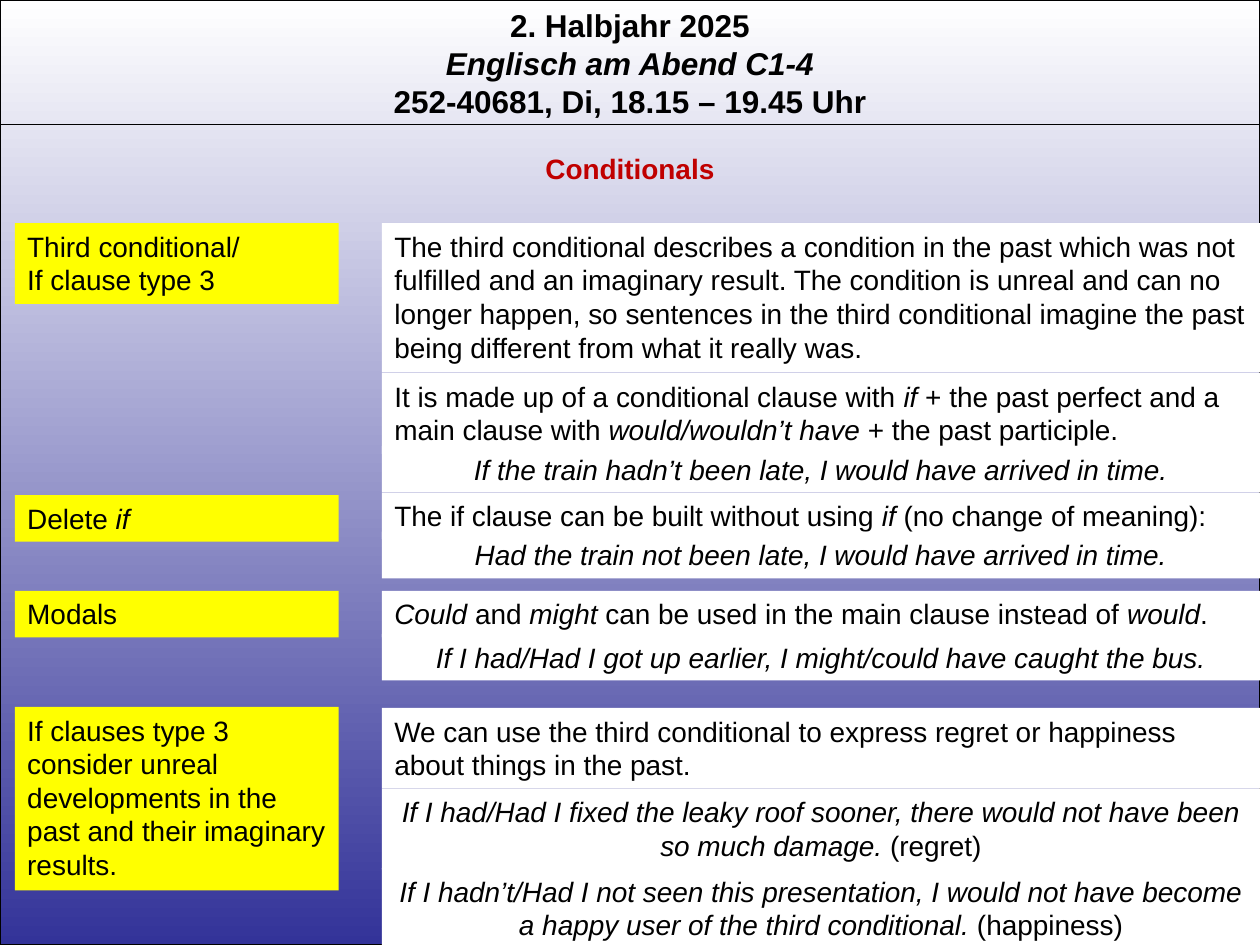
from pptx import Presentation
from pptx import util as u
from pptx.dml.color import RGBColor
from pptx.enum import shapes, text
from pptx.oxml.ns import qn
from lxml import etree

THEME = {
    "font": "Arial", "body": 16, "header": 18, "rule": 0.75,
    "ink": "000000", "accent": "C00000", "label": "FFFF00", "note": "FFFFFF",
    "top": "FFFFFF", "bottom": "333399",
}
LEFT, CENTER = text.PP_ALIGN.LEFT, text.PP_ALIGN.CENTER

# Content: asterisks enclose italics, a line break starts a paragraph
HEADER = "2. Halbjahr 2025\n*Englisch am Abend C1-4*\n252-40681, Di, 18.15 – 19.45 Uhr"
TITLE = "Conditionals"
# (top in cm, lines, text)
LABELS = [
    (4.5, 2, "Third conditional/\nIf clause type 3"),
    (9.98, 1, "Delete *if*"),
    (11.91, 1, "Modals"),
    (14.25, 5, "If clauses type 3 consider unreal developments in the past "
               "and their imaginary results."),
]
# (top in cm, lines, alignment, text)
NOTES = [
    (4.5, 4, LEFT, "The third conditional describes a condition in the past which was not "
                   "fulfilled and an imaginary result. The condition is unreal and can no "
                   "longer happen, so sentences in the third conditional imagine the past "
                   "being different from what it really was."),
    (7.52, 2, LEFT, "It is made up of a conditional clause with *if* + the past perfect and "
                    "a main clause with *would/wouldn’t have *+ the past participle."),
    (8.99, 1, CENTER, "*If the train hadn’t been late, I would have arrived in time.*"),
    (9.93, 1, LEFT, "The if clause can be built without using *if* (no change of meaning):"),
    (10.72, 1, CENTER, "*Had the train not been late, I would have arrived in time.*"),
    (11.91, 1, LEFT, "*Could* and *might* can be used in the main clause instead of *would*."),
    (12.78, 1, CENTER, "*If I had/Had I got up earlier, I might/could have caught the bus.*"),
    (14.27, 2, LEFT, "We can use the third conditional to express regret or happiness "
                     "about things in the past."),
    (15.9, 2, CENTER, "*If I had/Had I fixed the leaky roof sooner, there would not have "
                      "been so much damage. *(regret)"),
    (17.5, 2, CENTER, "*If I hadn’t/Had I not seen this presentation, I would not have "
                      "become a happy user of the third conditional. *(happiness)"),
]

# Geometry in cm
WIDTH, HEIGHT = 25.4, 19.05
LABEL_X, LABEL_W = 0.3, 6.53
NOTE_X = 7.7
LINE_H, PADDING = 0.69, 0.25


def rgb(name):
    return RGBColor.from_string(THEME[name])


def write(sp, content, align=LEFT, size="body", color="ink", bold=False):
    tf = sp.text_frame
    frame = {"word_wrap": True, "vertical_anchor": text.MSO_ANCHOR.TOP,
             "auto_size": text.MSO_AUTO_SIZE.SHAPE_TO_FIT_TEXT}
    for key, value in frame.items():
        setattr(tf, key, value)
    for i, line in enumerate(content.split("\n")):
        p = tf.add_paragraph() if i else tf.paragraphs[0]
        p.alignment = align
        for j, part in enumerate(line.split("*")):
            if not part:
                continue
            r = p.add_run()
            r.text = part
            style = {"name": THEME["font"], "size": u.Pt(THEME[size]),
                     "bold": bold, "italic": j % 2 == 1}
            for key, value in style.items():
                setattr(r.font, key, value)
            r.font.color.rgb = rgb(color)


def rectangle(s, x, y, w, h):
    sp = s.shapes.add_shape(shapes.MSO_SHAPE.RECTANGLE, u.Cm(x), u.Cm(y), u.Cm(w), u.Cm(h))
    sp.shadow.inherit = False
    return sp


def box(s, x, y, w, lines, fill, content, align=LEFT):
    sp = rectangle(s, x, y, w, PADDING + LINE_H * lines)
    sp.fill.solid()
    sp.fill.fore_color.rgb = rgb(fill)
    sp.line.fill.background()
    write(sp, content, align)


def outline(line):
    line.color.rgb = rgb("ink")
    line.width = u.Pt(THEME["rule"])


def main():
    prs = Presentation()
    prs.slide_width, prs.slide_height = u.Cm(WIDTH), u.Cm(HEIGHT)
    s = prs.slides.add_slide(prs.slide_layouts[5])

    # Gradient backdrop
    backdrop = rectangle(s, 0, 0, WIDTH, HEIGHT)
    backdrop.fill.gradient()
    backdrop.fill.gradient_angle = 270
    for stop, name in zip(backdrop.fill.gradient_stops, ("top", "bottom")):
        stop.color.rgb = rgb(name)
    outline(backdrop.line)

    # Course header with rule
    header = s.shapes.add_textbox(0, 0, u.Cm(WIDTH), u.Cm(2.57))
    write(header, HEADER, CENTER, "header", bold=True)
    rule = s.shapes.add_connector(shapes.MSO_CONNECTOR.STRAIGHT,
                                  0, u.Cm(2.51), u.Cm(WIDTH), u.Cm(2.51))
    outline(rule.line)
    etree.SubElement(rule.element.spPr, qn("a:effectLst"))

    # Title, brought in front of the backdrop
    title = s.shapes.title
    place = {"left": 0, "top": u.Cm(2.92), "width": u.Cm(WIDTH),
             "height": u.Cm(PADDING + LINE_H)}
    for key, value in place.items():
        setattr(title, key, value)
    write(title, TITLE, CENTER, color="accent", bold=True)
    title.element.getparent().append(title.element)

    # Labels on the left, explanations on the right
    for y, lines, content in LABELS:
        box(s, LABEL_X, y, LABEL_W, lines, "label", content)
    for y, lines, align, content in NOTES:
        box(s, NOTE_X, y, WIDTH - NOTE_X, lines, "note", content, align)

    prs.save("out.pptx")


if __name__ == "__main__":
    main()
